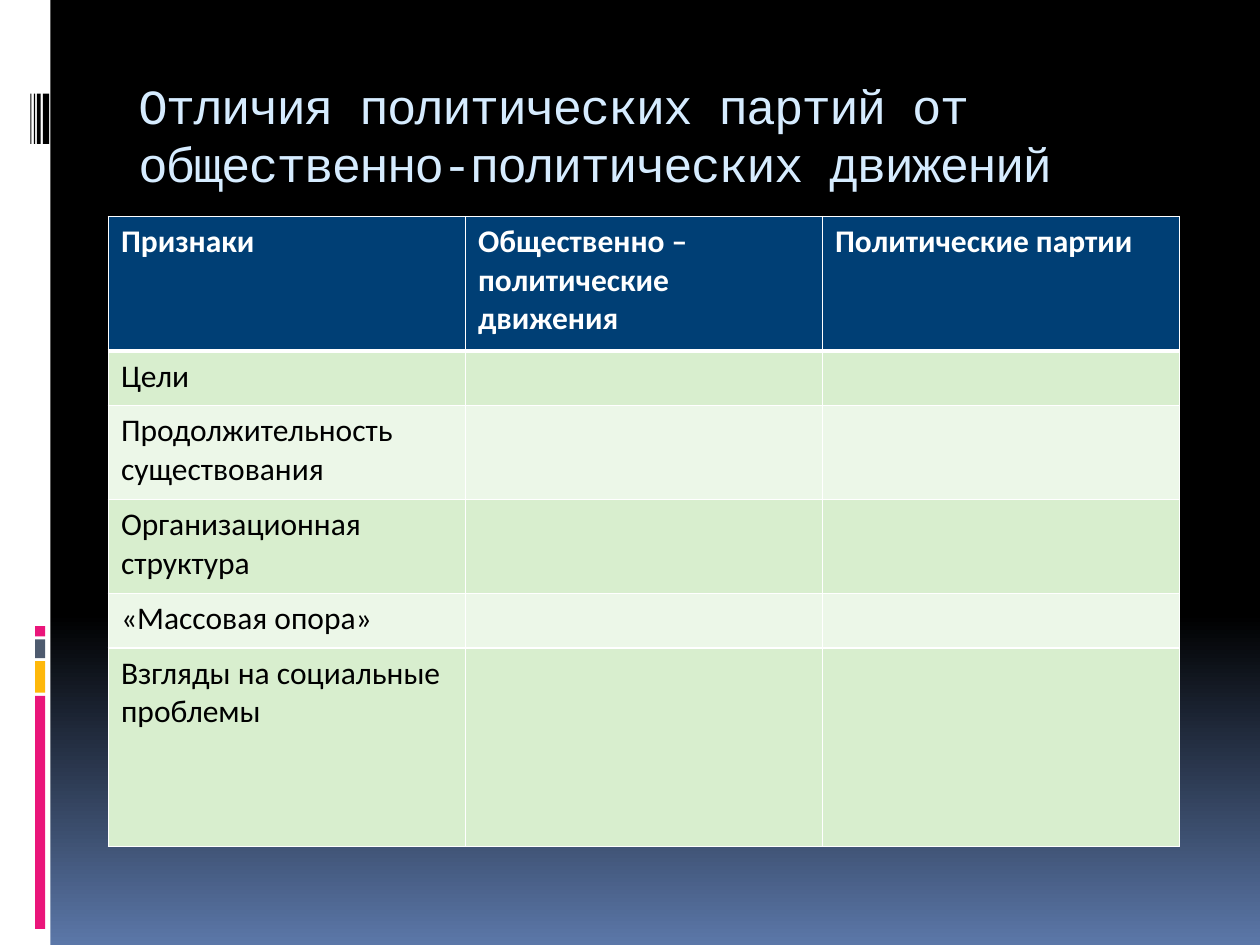
from dataclasses import dataclass

from lxml import etree
from pptx import Presentation
from pptx.dml.color import RGBColor
from pptx.enum.shapes import MSO_SHAPE
from pptx.enum.text import MSO_ANCHOR
from pptx.oxml import parse_xml
from pptx.oxml.ns import nsdecls, qn
from pptx.util import Pt


@dataclass(frozen=True)
class Theme:
    white: str = "FFFFFF"
    black: str = "000000"
    dusk: str = "5B77A8"
    pink: str = "EA157A"
    amber: str = "FEB80A"
    slate: str = "4E5B6F"
    title: str = "D6ECFF"
    header: str = "003F75"
    bands: tuple = ("D8EECE", "ECF7E8")
    title_font: str = "Courier New"
    body_font: str = "Calibri"
    title_size: int = 28
    body_size: int = 18


THEME = Theme()

ROWS = [
    ("Признаки", "Общественно – политические движения", "Политические партии"),
    ("Цели", "", ""),
    ("Продолжительность существования", "", ""),
    ("Организационная структура", "", ""),
    ("«Массовая опора»", "", ""),
    ("Взгляды на социальные проблемы", "", ""),
]
ROW_HEIGHTS = [76.9, 31, 53.8, 53.8, 31, 113.5]


def paint_background(page):
    stops = "".join(
        f'<a:gs pos="{place * 1000}"><a:srgbClr val="{color}"/></a:gs>'
        for place, color in [(0, THEME.black), (65, THEME.black), (100, THEME.dusk)]
    )
    page.background.fill.gradient()
    gradient = page.background._cSld.find(".//" + qn("a:gradFill"))
    gradient.getparent().replace(gradient, parse_xml(
        f'<a:gradFill {nsdecls("a")} rotWithShape="1"><a:gsLst>{stops}</a:gsLst>'
        '<a:lin ang="5400000" scaled="0"/></a:gradFill>'
    ))


def add_bar(page, left, top, width, height, color):
    bar = page.shapes.add_shape(
        MSO_SHAPE.RECTANGLE, Pt(left), Pt(top), Pt(width), Pt(height))
    bar.shadow.inherit = False
    bar.fill.solid()
    bar.fill.fore_color.rgb = RGBColor.from_string(color)
    bar.line.fill.background()


def add_side_strip(page, left, top, width, height):
    add_bar(page, left, top, width, height, THEME.white)
    for offset, length, color in [
        (397.6, 133.2, THEME.pink),
        (377.8, 18, THEME.amber),
        (365.3, 10.8, THEME.slate),
        (357.8, 5.8, THEME.pink),
    ]:
        add_bar(page, left + 20, top + offset, 5.8, length, color)
    for offset, thickness in [(24.5, 3.6), (21.1, 2.2), (19.4, 0.7), (17.3, 0.7)]:
        add_bar(page, left + offset, top + 53.5, thickness, 28.8, THEME.black)


def style_text(para, font_name, size, color, bold=False):
    para.font.name = font_name
    para.font.size = Pt(size)
    para.font.bold = bold
    para.font.color.rgb = RGBColor.from_string(color)


def add_title(page, left, top, width, height):
    box = page.shapes.add_textbox(Pt(left), Pt(top), Pt(width), Pt(height))
    frame = box.text_frame
    frame.word_wrap = True
    frame.vertical_anchor = MSO_ANCHOR.MIDDLE
    para = frame.paragraphs[0]
    span = para.add_run()
    span.text = "Отличия политических партий от общественно-политических движений"
    style_text(para, THEME.title_font, THEME.title_size, THEME.title)
    span.font._element.set("spc", "-100")


def set_borders(cell, bottom):
    properties = cell._tc.get_or_add_tcPr()
    for position, (side, weight) in enumerate(
            [("lnL", 1), ("lnR", 1), ("lnT", 1), ("lnB", bottom)]):
        border = etree.Element(qn(f"a:{side}"), w=str(Pt(weight)))
        fill = etree.SubElement(border, qn("a:solidFill"))
        etree.SubElement(fill, qn("a:srgbClr"), val=THEME.white)
        properties.insert(position, border)


def add_comparison(page, left, top, width, height):
    table = page.shapes.add_table(
        len(ROWS), len(ROWS[0]), Pt(left), Pt(top), Pt(width), Pt(height)).table
    for row_index, (texts, row_height) in enumerate(zip(ROWS, ROW_HEIGHTS)):
        is_header = row_index == 0
        table.rows[row_index].height = Pt(row_height)
        fill = THEME.header if is_header else THEME.bands[(row_index - 1) % 2]
        color = THEME.white if is_header else THEME.black
        for column_index, text in enumerate(texts):
            cell = table.cell(row_index, column_index)
            cell.text = text
            cell.fill.solid()
            cell.fill.fore_color.rgb = RGBColor.from_string(fill)
            style_text(cell.text_frame.paragraphs[0], THEME.body_font,
                       THEME.body_size, color, is_header)
            set_borders(cell, 3 if row_index == 0 else 1)


def main():
    deck = Presentation()
    deck.slide_width, deck.slide_height = Pt(720), Pt(540)
    page = deck.slides.add_slide(deck.slide_layouts[6])
    paint_background(page)
    add_side_strip(page, 0, 0, 28.8, 540)
    add_comparison(page, 62, 123.8, 612, 360)
    add_title(page, 72, 40.5, 612, 72)
    deck.save("out.pptx")


if __name__ == "__main__":
    main()
